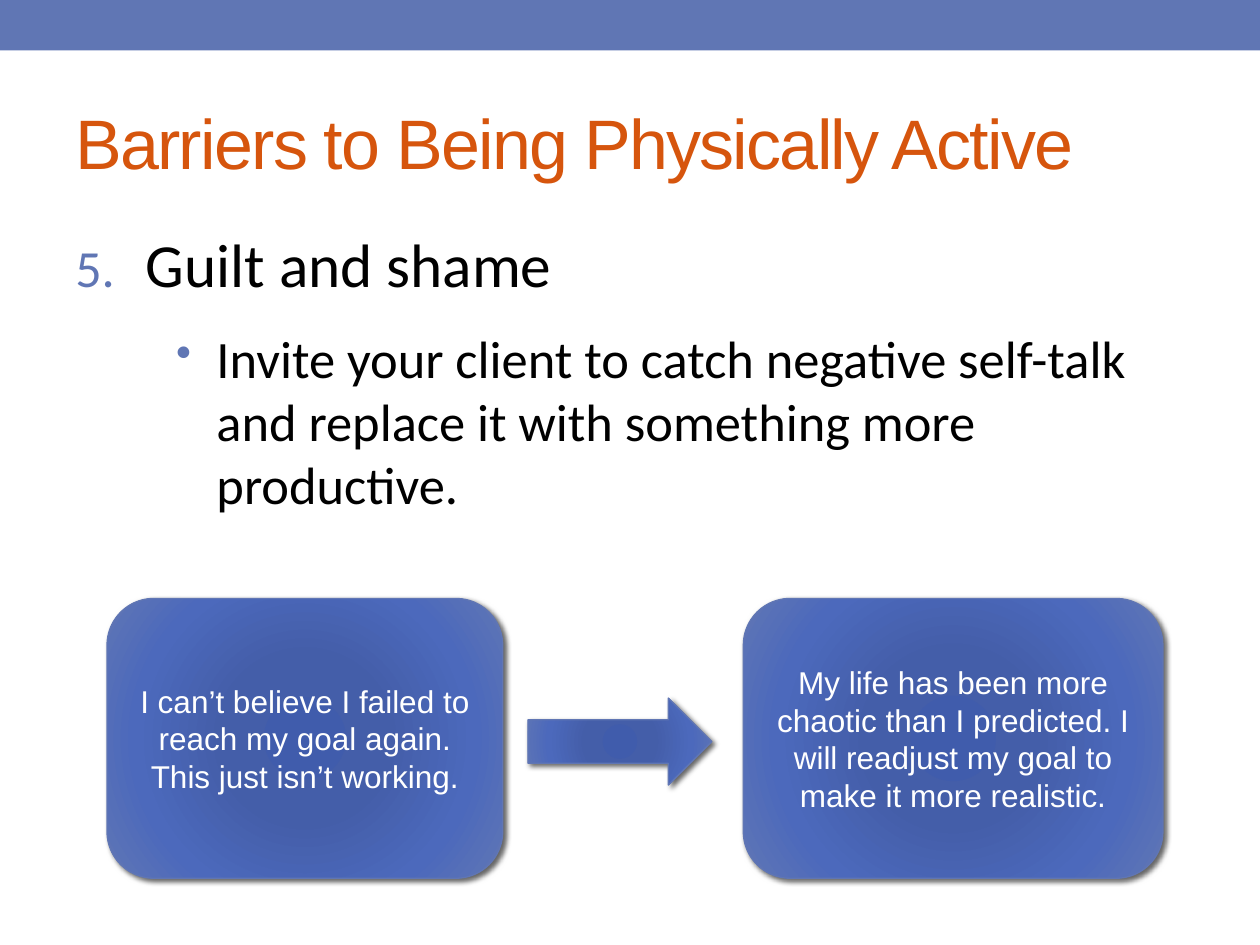
from dataclasses import dataclass

from pptx import Presentation
from pptx import oxml
from pptx import util as u
from pptx.dml import color
from pptx.enum import shapes, text
from pptx.oxml import ns


@dataclass(frozen=True)
class Theme:
    blue: str = "6076B4"
    orange: str = "D6550D"
    black: str = "000000"
    white: str = "FFFFFF"
    gradient: tuple = ((0, "405CAC"), (34, "445EA9"), (70, "4C69BC"), (100, "6076B4"))
    heading_font: str = "Arial"
    body_font: str = "Calibri"
    title_size: int = 40
    barrier_size: int = 35
    advice_size: int = 30
    thought_size: int = 18


THEME = Theme()


def inches(box):
    return [u.Inches(length) for length in box]


def rgb(value):
    return color.RGBColor.from_string(value)


def element(xml):
    tag, rest = xml.split(" ", 1)
    return oxml.parse_xml(f"{tag} {ns.nsdecls('a')} {rest}")


def write(paragraph, words, size, font, ink, align=text.PP_ALIGN.LEFT, spacing=0):
    paragraph.alignment = align
    run = paragraph.add_run()
    run.text = words
    run.font.size = u.Pt(size)
    run.font.name = font
    run.font.color.rgb = rgb(ink)
    if spacing:
        run.font._element.set("spc", str(spacing * 100))


def set_bullet(paragraph, margin, hanging, marker):
    properties = paragraph._p.get_or_add_pPr()
    properties.set("marL", str(u.Inches(margin)))
    properties.set("indent", str(-u.Inches(hanging)))
    for xml in (
        f'<a:buClr ><a:srgbClr val="{THEME.blue}"/></a:buClr>',
        '<a:buSzPct val="85000"/>',
        marker,
    ):
        properties.append(element(xml))


def add_text_frame(slide, box, anchor):
    frame = slide.shapes.add_textbox(*inches(box)).text_frame
    frame.word_wrap = True
    frame.vertical_anchor = anchor
    return frame


def add_band(slide, box):
    band = slide.shapes.add_shape(shapes.MSO_SHAPE.RECTANGLE, *inches(box))
    band.shadow.inherit = False
    band.fill.solid()
    band.fill.fore_color.rgb = rgb(THEME.blue)
    band.line.fill.background()


def add_title(slide, box, words):
    frame = add_text_frame(slide, box, text.MSO_ANCHOR.MIDDLE)
    write(frame.paragraphs[0], words, THEME.title_size, THEME.heading_font,
          THEME.orange, spacing=-1)


def add_barrier(slide, box, number, name, advice):
    frame = add_text_frame(slide, box, text.MSO_ANCHOR.TOP)
    barrier, tip = frame.paragraphs[0], frame.add_paragraph()
    write(barrier, name, THEME.barrier_size, THEME.body_font, THEME.black)
    write(tip, advice, THEME.advice_size, THEME.body_font, THEME.black)
    for paragraph in (barrier, tip):
        paragraph.space_before = u.Pt(5)
        paragraph.space_after = u.Pt(10)
    set_bullet(barrier, 0.56, 0.56,
               f'<a:buAutoNum type="arabicPeriod" startAt="{number}"/>')
    set_bullet(tip, 1.12, 0.32, '<a:buChar char="•"/>')


def add_glossy_shape(slide, preset, box):
    shape = slide.shapes.add_shape(preset, *inches(box))
    shape.line.color.rgb = rgb(THEME.blue)
    shape.line.width = u.Pt(0.75)
    stops = "".join(
        f'<a:gs pos="{position * 1000}"><a:srgbClr val="{tint}"/></a:gs>'
        for position, tint in THEME.gradient
    )
    properties = shape._element.spPr
    properties.find(ns.qn("a:prstGeom")).addnext(element(
        f'<a:gradFill rotWithShape="1"><a:gsLst>{stops}</a:gsLst><a:path path="circle">'
        '<a:fillToRect l="50000" t="50000" r="50000" b="50000"/></a:path></a:gradFill>'
    ))
    shape.shadow.inherit = False
    properties.find(ns.qn("a:effectLst")).append(element(
        f'<a:outerShdw blurRad="{u.Pt(3)}" dist="{u.Pt(2)}" dir="2700000" '
        f'rotWithShape="0"><a:srgbClr val="{THEME.black}">'
        '<a:alpha val="60000"/></a:srgbClr></a:outerShdw>'
    ))
    return shape


def add_thought(slide, box, words):
    card = add_glossy_shape(slide, shapes.MSO_SHAPE.ROUNDED_RECTANGLE, box)
    frame = card.text_frame
    frame.word_wrap = True
    frame.vertical_anchor = text.MSO_ANCHOR.MIDDLE
    write(frame.paragraphs[0], words, THEME.thought_size, THEME.heading_font,
          THEME.white, align=text.PP_ALIGN.CENTER)


def add_reframing(slide, box, negative, productive):
    left, top, width, height = box
    negative_width, productive_width = 3.14, 3.33
    arrow_width, arrow_height = 1.46, 0.69
    add_thought(slide, (left, top, negative_width, height), negative)
    add_thought(slide, (left + width - productive_width, top, productive_width, height),
                productive)
    add_glossy_shape(slide, shapes.MSO_SHAPE.RIGHT_ARROW,
                     (left + negative_width + 0.2, top + 0.79, arrow_width, arrow_height))


def main():
    deck = Presentation()
    deck.slide_width, deck.slide_height = u.Inches(10), u.Inches(7.5)
    slide = deck.slides.add_slide(deck.slide_layouts[6])
    add_band(slide, (0, 0, 10, 0.4))
    add_title(slide, (0.5, 0.58, 9, 1.08), "Barriers to Being Physically Active")
    add_barrier(
        slide, (0.5, 1.75, 9, 4.06), 5, "Guilt and shame",
        "Invite your client to catch negative self-talk and replace it with "
        "something more productive.",
    )
    add_reframing(
        slide, (0.85, 4.75, 8.38, 2.22),
        "I can’t believe I failed to reach my goal again. This just isn’t working.",
        "My life has been more chaotic than I predicted. I will readjust my goal "
        "to make it more realistic.",
    )
    deck.save("out.pptx")


if __name__ == "__main__":
    main()
